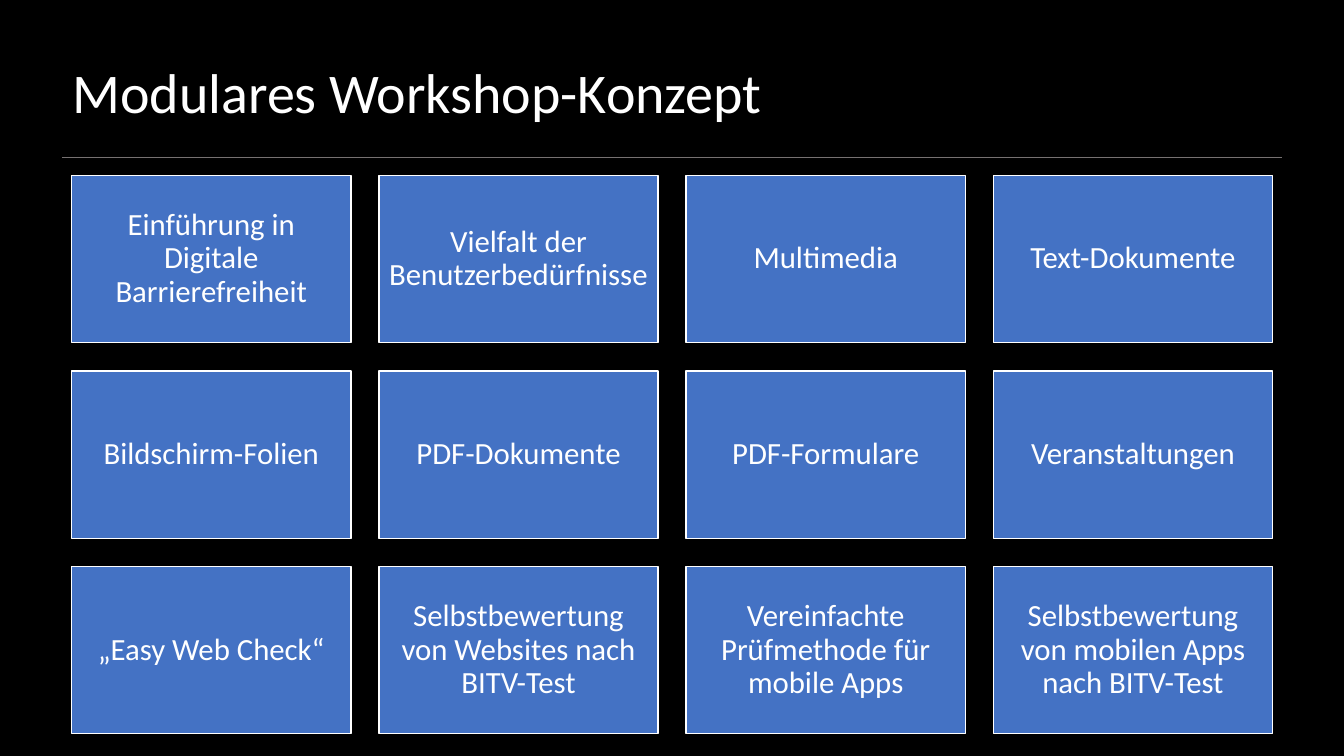
"""Build the slide listing the modules of the workshop concept."""
from pptx import Presentation
from pptx.dml.color import RGBColor
from pptx.enum.shapes import MSO_CONNECTOR, MSO_SHAPE
from pptx.enum.text import MSO_ANCHOR, MSO_AUTO_SIZE, PP_ALIGN
from pptx.oxml.ns import qn
from pptx.util import Inches, Pt
from lxml.etree import SubElement

COLORS = {"background": "000000", "text": "FFFFFF", "tile": "4472C4", "rule": "767171"}
MODULES = [
    ["Einführung in Digitale Barrierefreiheit", "Vielfalt der Benutzerbedürfnisse",
     "Multimedia", "Text-Dokumente"],
    ["Bildschirm-Folien", "PDF-Dokumente", "PDF-Formulare", "Veranstaltungen"],
    ["„Easy Web Check“", "Selbstbewertung von Websites nach BITV-Test",
     "Vereinfachte Prüfmethode für mobile Apps",
     "Selbstbewertung von mobilen Apps nach BITV-Test"],
]


class SlideBuilder:
    """Draw styled elements on one slide, with lengths in percent of its size."""

    font = "Calibri"
    tile_left, tile_top = 5.33, 23.2
    tile_width, tile_height = 20.78, 22.13
    column_step, row_step = 22.86, 25.87

    def __init__(self, deck):
        self.deck = deck
        self.page = deck.slides.add_slide(deck.slide_layouts[5])
        self.paint(self.page.background.fill, "background")

    def paint(self, fill, color):
        fill.solid()
        fill.fore_color.rgb = RGBColor.from_string(COLORS[color])

    def across(self, percent):
        return round(self.deck.slide_width * percent / 100)

    def down(self, percent):
        return round(self.deck.slide_height * percent / 100)

    def place(self, left, top, width, height):
        return self.across(left), self.down(top), self.across(width), self.down(height)

    def set_text(self, box, text, size, alignment):
        frame = box.text_frame
        frame.text = text
        frame.word_wrap = True
        frame.auto_size = MSO_AUTO_SIZE.NONE
        frame.vertical_anchor = MSO_ANCHOR.MIDDLE
        para = frame.paragraphs[0]
        para.alignment = alignment
        para.line_spacing = 0.9
        para.font.name = self.font
        para.font.size = Pt(size)
        para.font.color.rgb = RGBColor.from_string(COLORS["text"])
        return frame

    def title(self, text, *area):
        box = self.page.shapes.title
        box.left, box.top, box.width, box.height = self.place(*area)
        self.set_text(box, text, 40, PP_ALIGN.LEFT)

    def rule(self, left, right, top):
        line = self.page.shapes.add_connector(
            MSO_CONNECTOR.STRAIGHT,
            self.across(left), self.down(top), self.across(right), self.down(top))
        line.line.width = Pt(0.5)
        line.line.color.rgb = RGBColor.from_string(COLORS["rule"])
        SubElement(line._element.spPr, qn("a:effectLst"))

    def tile(self, text, column, row):
        box = self.page.shapes.add_shape(MSO_SHAPE.RECTANGLE, *self.place(
            self.tile_left + column * self.column_step,
            self.tile_top + row * self.row_step,
            self.tile_width, self.tile_height))
        box.shadow.inherit = False
        self.paint(box.fill, "tile")
        box.line.width = Pt(1)
        box.line.color.rgb = RGBColor.from_string(COLORS["text"])
        frame = self.set_text(box, text, 22, PP_ALIGN.CENTER)
        frame.margin_left = frame.margin_right = Inches(0.09)
        frame.margin_top = frame.margin_bottom = Inches(0.09)


def main():
    deck = Presentation()
    deck.slide_width, deck.slide_height = Inches(13.33), Inches(7.5)
    builder = SlideBuilder(deck)
    builder.rule(4.65, 95.42, 20.8)
    builder.title("Modulares Workshop-Konzept", 4.65, 5.33, 71.27, 14.67)
    for row, modules in enumerate(MODULES):
        for column, module in enumerate(modules):
            builder.tile(module, column, row)
    deck.save("out.pptx")


if __name__ == "__main__":
    main()
